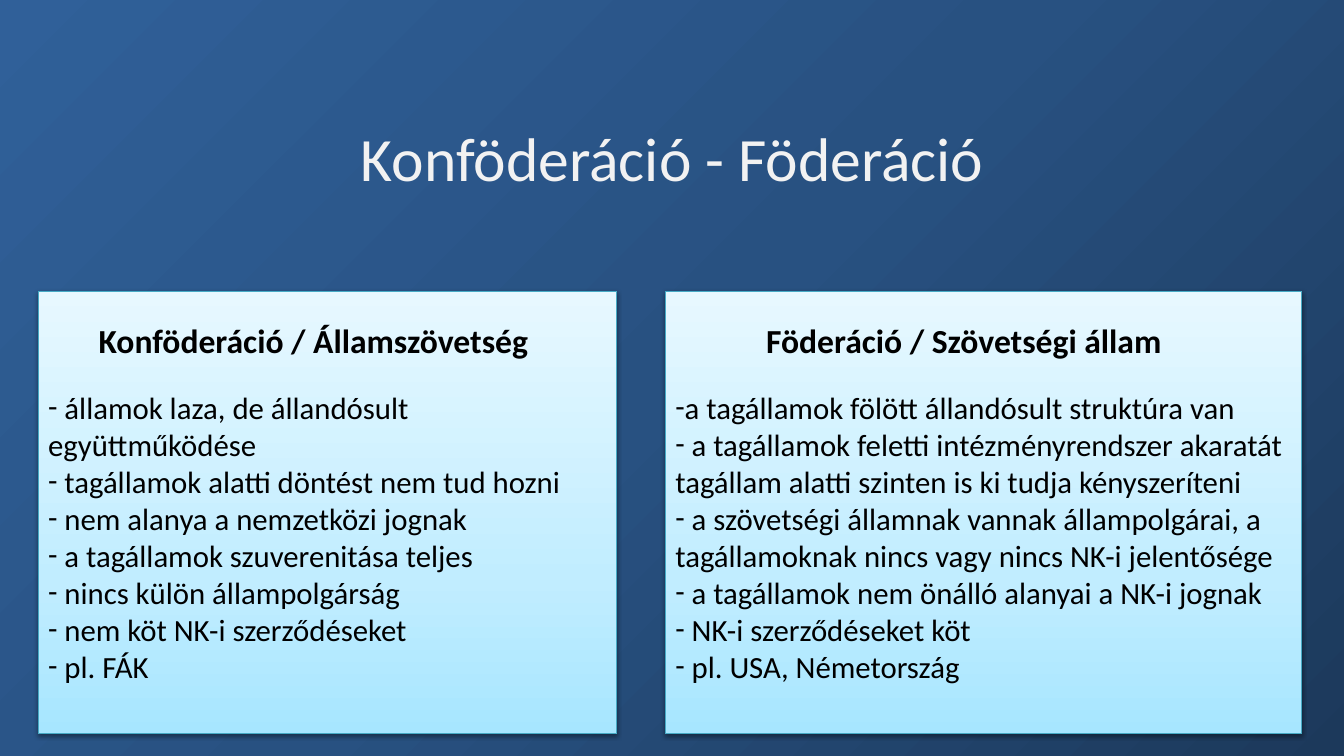
from lxml import etree
from pptx import Presentation
from pptx.dml.color import RGBColor
from pptx.enum import shapes, text
from pptx.oxml import ns
from pptx.util import Inches, Pt

FONT = "Calibri"
COLORS = {"title": "F2F2F2", "text": "000000", "border": "46AAC5", "shadow": "000000"}
BACKGROUND_STOPS = [(0, "1C395B"), (50, "285181"), (100, "306099")]
CARD_STOPS = [(0, "A7E6FF"), (35, "C1EDFF"), (100, "E7F8FF")]

CARD_TOP, CARD_HEIGHT = 2.89, 4.39
HEADING_TOP, HEADING_HEIGHT = 3.12, 0.5
LIST_TOP, LIST_HEIGHT = 3.81, 3.06

COLUMNS = [
    {
        "left": 0.38, "width": 5.74,
        "heading": "Konföderáció / Államszövetség",
        "heading_left": 0.88, "heading_width": 4.71,
        "alignment": text.PP_ALIGN.LEFT,
        "items": [
            " államok laza, de állandósult együttműködése",
            " tagállamok alatti döntést nem tud hozni",
            " nem alanya a nemzetközi jognak",
            " a tagállamok szuverenitása teljes",
            " nincs külön állampolgárság",
            " nem köt NK-i szerződéseket",
            " pl. FÁK",
        ],
    },
    {
        "left": 6.6, "width": 6.31,
        "heading": "Föderáció / Szövetségi állam",
        "heading_left": 7.23, "heading_width": 4.66,
        "alignment": text.PP_ALIGN.CENTER,
        "items": [
            "a tagállamok fölött állandósult struktúra van",
            " a tagállamok feletti intézményrendszer akaratát tagállam alatti "
            "szinten is ki tudja kényszeríteni",
            " a szövetségi államnak vannak állampolgárai, a tagállamoknak nincs "
            "vagy nincs NK-i jelentősége",
            " a tagállamok nem önálló alanyai a NK-i jognak",
            " NK-i szerződéseket köt",
            " pl. USA, Németország",
        ],
    },
]


def add_xml(parent, tag, **attributes):
    return etree.SubElement(parent, ns.qn(tag), attributes)


def format_runs(text_frame, size, color, bold=False):
    for paragraph in text_frame.paragraphs:
        for run in paragraph.runs:
            run.font.name = FONT
            run.font.size = Pt(size)
            run.font.bold = bold
            run.font.color.rgb = RGBColor.from_string(COLORS[color])


def add_gradient_rectangle(slide, left, top, width, height, stops, angle):
    """Add a borderless rectangle; angle is counter-clockwise in degrees."""
    shape = slide.shapes.add_shape(
        shapes.MSO_SHAPE.RECTANGLE,
        Inches(left), Inches(top), Inches(width), Inches(height))
    shape.shadow.inherit = False
    shape.line.fill.background()
    shape.fill.gradient()
    shape.fill.gradient_angle = angle
    stop_list = shape.element.spPr.find(".//" + ns.qn("a:gsLst"))
    for stop in list(stop_list):
        stop_list.remove(stop)
    for position, color in stops:
        stop = add_xml(stop_list, "a:gs", pos=str(position * 1000))
        add_xml(stop, "a:srgbClr", val=color)
    return shape


def add_background(slide):
    background = add_gradient_rectangle(slide, 0, 0, 13.33, 7.53, BACKGROUND_STOPS, 135)
    # The first two children of the shape tree are its properties.
    slide.shapes.element.insert(2, background.element)


def set_title(slide, title_text):
    title = slide.shapes.title
    title.left, title.top = Inches(0.67), Inches(0.93)
    title.width, title.height = Inches(12), Inches(1.25)
    title.text_frame.text = title_text
    title.text_frame.vertical_anchor = text.MSO_ANCHOR.MIDDLE
    title.text_frame.paragraphs[0].alignment = text.PP_ALIGN.CENTER
    format_runs(title.text_frame, 44, "title")


def add_card(slide, left, width):
    card = add_gradient_rectangle(slide, left, CARD_TOP, width, CARD_HEIGHT, CARD_STOPS, 90)
    card.line.color.rgb = RGBColor.from_string(COLORS["border"])
    card.line.width = Pt(0.75)
    effects = card.element.spPr.find(ns.qn("a:effectLst"))
    shadow = add_xml(effects, "a:outerShdw", blurRad=str(Pt(3.1)), dist=str(Pt(1.6)),
                     dir="5400000", rotWithShape="0")
    color = add_xml(shadow, "a:srgbClr", val=COLORS["shadow"])
    add_xml(color, "a:alpha", val="38000")


def add_text_box(slide, left, top, width, height, paragraphs):
    box = slide.shapes.add_textbox(Inches(left), Inches(top), Inches(width), Inches(height))
    text_frame = box.text_frame
    text_frame.text = "\n".join(paragraphs)
    text_frame.word_wrap = True
    text_frame.auto_size = text.MSO_AUTO_SIZE.SHAPE_TO_FIT_TEXT
    return text_frame


def add_heading(slide, column):
    text_frame = add_text_box(slide, column["heading_left"], HEADING_TOP,
                              column["heading_width"], HEADING_HEIGHT, [column["heading"]])
    text_frame.paragraphs[0].alignment = column["alignment"]
    format_runs(text_frame, 24, "text", bold=True)


def add_dash_list(slide, column):
    text_frame = add_text_box(slide, column["left"], LIST_TOP,
                              column["width"], LIST_HEIGHT, column["items"])
    for paragraph in text_frame.paragraphs:
        properties = paragraph._p.get_or_add_pPr()
        add_xml(properties, "a:buFont", typeface=FONT)
        add_xml(properties, "a:buChar", char="-")
    format_runs(text_frame, 22, "text")


def main():
    presentation = Presentation()
    presentation.slide_width, presentation.slide_height = Inches(13.33), Inches(7.5)
    slide = presentation.slides.add_slide(presentation.slide_layouts.get_by_name("Title Only"))
    add_background(slide)
    set_title(slide, "Konföderáció - Föderáció")
    for column in COLUMNS:
        add_card(slide, column["left"], column["width"])
        add_heading(slide, column)
        add_dash_list(slide, column)
    presentation.save("out.pptx")


if __name__ == "__main__":
    main()
